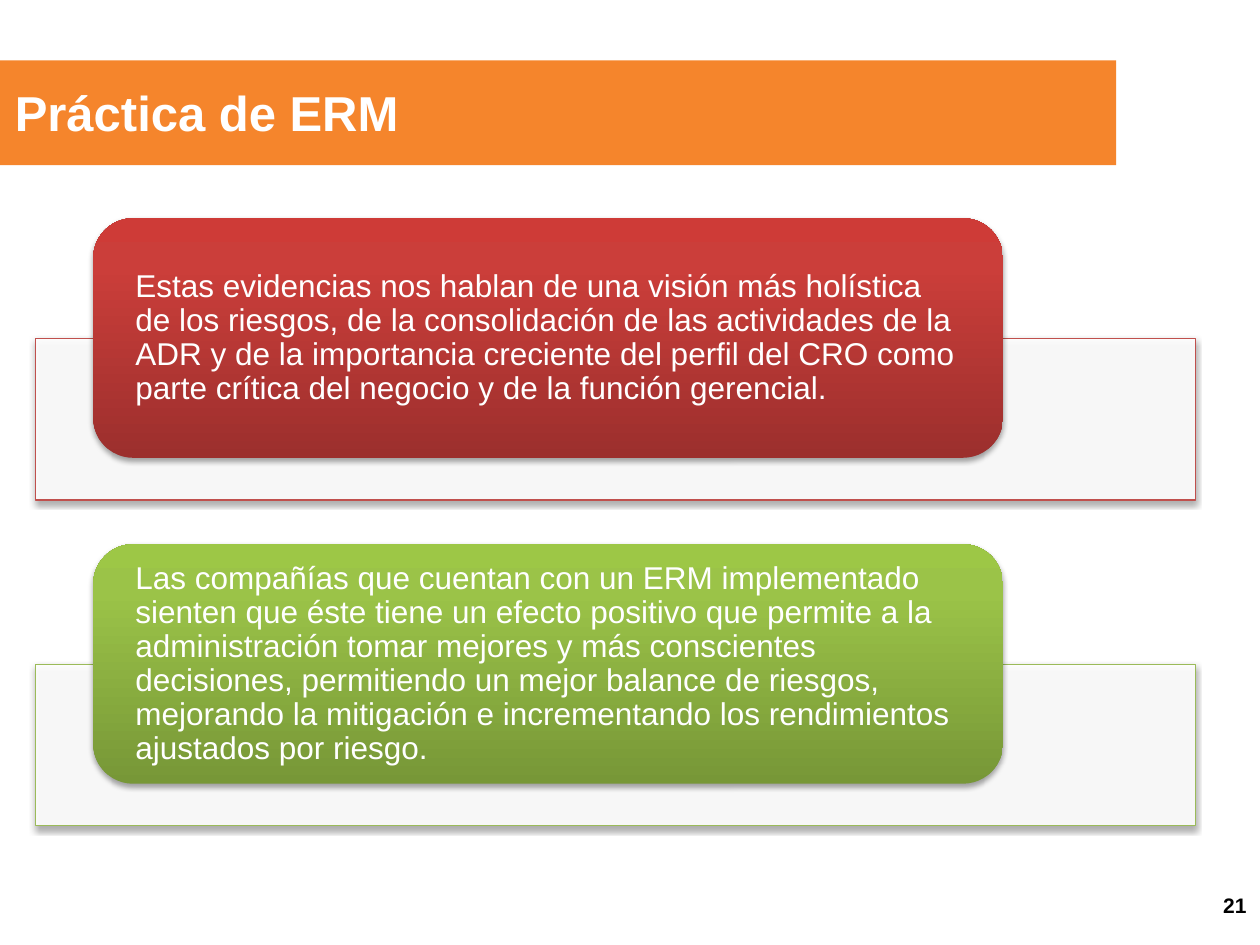
from copy import deepcopy

from lxml import etree
from pptx import Presentation
from pptx.dml.color import RGBColor
from pptx.enum.shapes import MSO_SHAPE
from pptx.enum.text import MSO_ANCHOR, PP_ALIGN
from pptx.oxml import parse_xml
from pptx.oxml.ns import nsdecls, qn
from pptx.util import Cm, Pt

RECTANGLE, ROUNDED = MSO_SHAPE.RECTANGLE, MSO_SHAPE.ROUNDED_RECTANGLE
MIDDLE = MSO_ANCHOR.MIDDLE
LEFT, RIGHT = PP_ALIGN.LEFT, PP_ALIGN.RIGHT

FONT = "Arial"
COLORS = {
    "white": "FFFFFF",
    "black": "000000",
    "orange": "F5852C",
    "red": "C0504D",
    "green": "9BBB59",
}
# Gradient stops run from the bottom of a card to its top
CARD_STOPS = {
    "red": [(0, "9C2F2D"), (0.8, "CB3E3A"), (1, "CE3B37")],
    "green": [(0, "779737"), (0.8, "9BC348"), (1, "9DC746")],
}
STATEMENTS = [
    ("red", "Estas evidencias nos hablan de una visión más holística de los riesgos, "
            "de la consolidación de las actividades de la ADR y de la importancia "
            "creciente del perfil del CRO como parte crítica del negocio y de la "
            "función gerencial."),
    ("green", "Las compañías que cuentan con un ERM implementado sienten que éste tiene "
              "un efecto positivo que permite a la administración tomar mejores y más "
              "conscientes decisiones, permitiendo un mejor balance de riesgos, "
              "mejorando la mitigación e incrementando los rendimientos ajustados por "
              "riesgo."),
]
STATEMENT_STEP = 6.57


def rgb(name):
    return RGBColor.from_string(COLORS[name])


def add_text(slide, box, text, size=18, color="white", bold=False, align=LEFT,
             line_spacing=None, side_inset=0.25, end_inset=0.13):
    text_box = slide.shapes.add_textbox(*map(Cm, box))
    frame = text_box.text_frame
    frame.word_wrap = True
    frame.vertical_anchor = MIDDLE
    frame.margin_left = frame.margin_right = Cm(side_inset)
    frame.margin_top = frame.margin_bottom = Cm(end_inset)
    paragraph = frame.paragraphs[0]
    paragraph.text = text
    paragraph.alignment = align
    paragraph.line_spacing = line_spacing
    font = paragraph.font
    font.name, font.size, font.bold = FONT, Pt(size), bold
    font.color.rgb = rgb(color)


def add_block(slide, kind, box, fill=None, line=None):
    shape = slide.shapes.add_shape(kind, *map(Cm, box))
    shape.shadow.inherit = False
    if fill:
        shape.fill.solid()
        shape.fill.fore_color.rgb = rgb(fill)
    if line:
        shape.line.color.rgb = rgb(line)
        shape.line.width = Pt(0.75)
    else:
        shape.line.fill.background()
    return shape


def set_opacity(shape, percent):
    color = shape.fill._xPr.find(qn("a:solidFill"))[0]
    etree.SubElement(color, qn("a:alpha"), val=str(percent * 1000))


def set_gradient(shape, stops):
    shape.fill.gradient()
    shape.fill.gradient_angle = 90
    stop_list = next(shape._element.spPr.iter(qn("a:gsLst")))
    stop_list.append(deepcopy(stop_list[-1]))
    for stop, (position, color) in zip(shape.fill.gradient_stops, stops):
        stop.position = position
        stop.color.rgb = RGBColor.from_string(color)


def add_shadow(shape):
    effects = shape._element.spPr.find(qn("a:effectLst"))
    effects.append(parse_xml(
        f'<a:outerShdw {nsdecls("a")} blurRad="{Pt(3.1)}" dist="{Pt(1.8)}" '
        f'dir="5400000" rotWithShape="0"><a:srgbClr val="{COLORS["black"]}">'
        '<a:alpha val="35000"/></a:srgbClr></a:outerShdw>'))


def add_header(slide, box, title):
    left, top, width, height = box
    add_block(slide, RECTANGLE, box, fill="orange")
    add_text(slide, (left + 0.05, top + 0.13, width - 2.28, height - 0.28), title,
             size=28, bold=True)


def add_statement(slide, box, color, text):
    left, top, width, height = box

    # Outlined panel behind
    panel_top = 2.43
    panel = add_block(slide, RECTANGLE,
                      (left, top + panel_top, width, height - panel_top),
                      fill="white", line=color)
    set_opacity(panel, 90)
    add_shadow(panel)

    # Rounded card in front
    card_left, card_width, card_height = left + 1.17, 18.34, 4.83
    card = add_block(slide, ROUNDED, (card_left, top, card_width, card_height))
    set_gradient(card, CARD_STOPS[color])
    add_shadow(card)

    # Text inside the card's rounded corners
    inset = 0.24
    add_text(slide, (card_left + inset, top + inset,
                     card_width - 2 * inset, card_height - 2 * inset),
             text, line_spacing=0.9, side_inset=0.61, end_inset=0)


def main():
    presentation = Presentation()
    presentation.slide_width, presentation.slide_height = Cm(25.4), Cm(19.05)
    slide = presentation.slides.add_slide(presentation.slide_layouts[6])

    add_header(slide, (0, 1.22, 22.5, 2.11), "Práctica de ERM")
    # Page number
    add_text(slide, (19.46, 17.73, 5.92, 1.02), "21", size=12, color="black",
             bold=True, align=RIGHT)
    for index, (color, text) in enumerate(STATEMENTS):
        add_statement(slide, (0.71, 4.4 + index * STATEMENT_STEP, 23.39, 5.68),
                      color, text)

    presentation.save("out.pptx")


if __name__ == "__main__":
    main()
